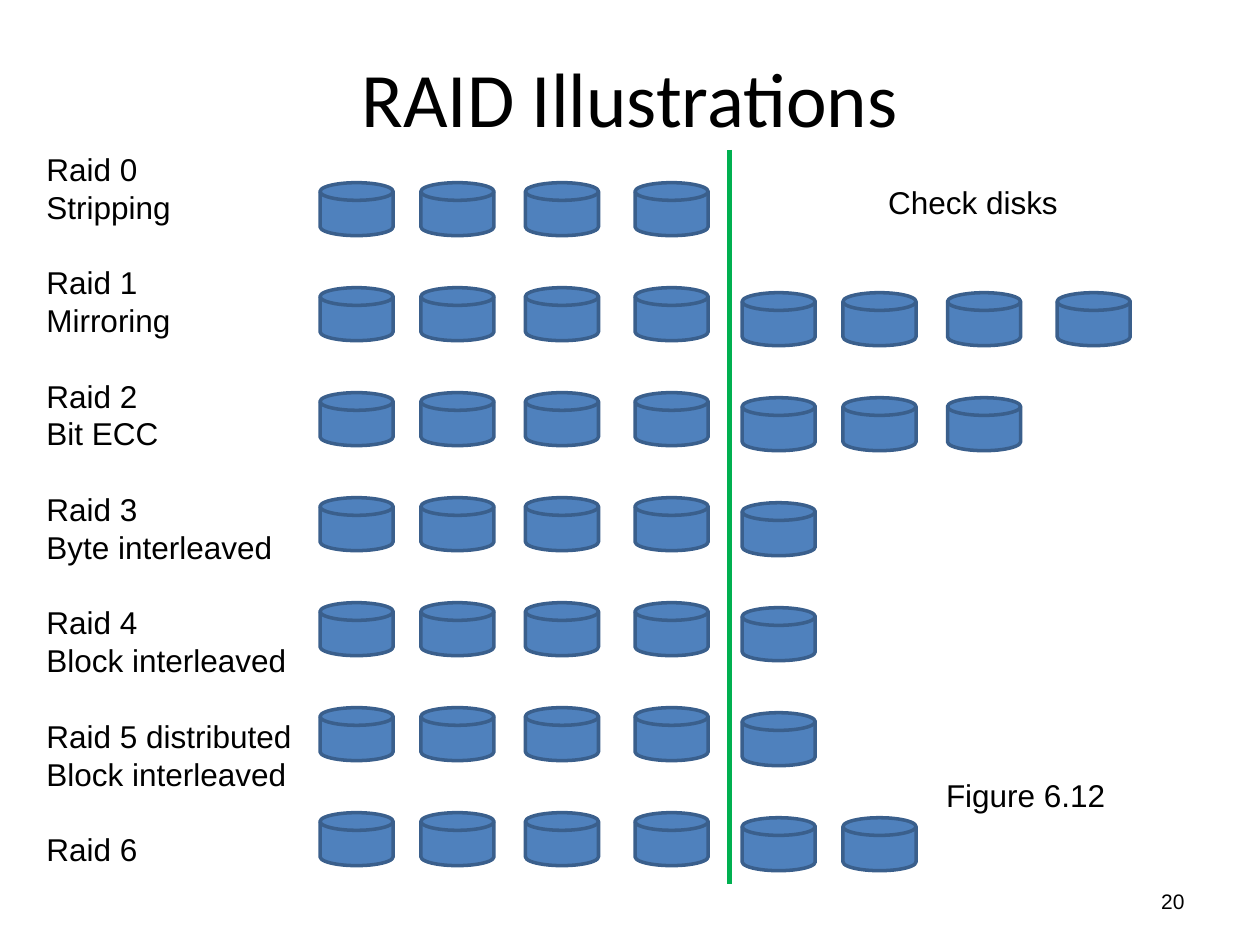
import pptx
import pptx.dml.color
import pptx.enum.shapes
import pptx.enum.text
import pptx.oxml.ns
import pptx.util
from lxml import etree

Inches = pptx.util.Inches
Pt = pptx.util.Pt
SHAPE = pptx.enum.shapes.MSO_SHAPE
ALIGN = pptx.enum.text.PP_ALIGN
ANCHOR = pptx.enum.text.MSO_ANCHOR
HUES = {"text": "000000", "disk": "4F81BD", "edge": "3A5F8C", "split": "00B050"}


def put(item, **vals):
    for name, val in vals.items():
        setattr(item, name, val)


def hue(name):
    return pptx.dml.color.RGBColor.from_string(HUES[name])


class Page:
    font = "Arial"
    size = 18

    def __init__(self, slide):
        self.slide = slide

    def text(self, box, groups, font=None, size=None, align=ALIGN.LEFT,
             anchor=ANCHOR.TOP, wrap=True, lead=None):
        """Write groups of lines; lead is the line pitch and the gap between groups."""
        frame = self.slide.shapes.add_textbox(*map(Inches, box)).text_frame
        put(frame, word_wrap=wrap, vertical_anchor=anchor)
        para = frame.paragraphs[0]
        for g, lines in enumerate(groups):
            for n, line in enumerate(lines):
                if g or n:
                    para = frame.add_paragraph()
                para.alignment = align
                if lead:
                    gap = lead if g and not n else 0
                    put(para, line_spacing=Pt(lead), space_before=Pt(gap))
                run = para.add_run()
                run.text = line
                put(run.font, name=font or self.font, size=Pt(size or self.size))
                run.font.color.rgb = hue("text")

    def disk(self, left, top):
        disk = self.slide.shapes.add_shape(
            SHAPE.FLOWCHART_MAGNETIC_DISK,
            *map(Inches, (left, top, 0.58, 0.42)))
        disk.shadow.inherit = False
        disk.fill.solid()
        disk.fill.fore_color.rgb = hue("disk")
        disk.line.color.rgb = hue("edge")
        disk.line.width = Pt(2)

    def line(self, x, top, end):
        line = self.slide.shapes.add_connector(
            pptx.enum.shapes.MSO_CONNECTOR.STRAIGHT,
            *map(Inches, (x, top, x, end)))
        line.line.color.rgb = hue("split")
        line.line.width = Pt(3)
        etree.SubElement(line._element.spPr, pptx.oxml.ns.qn("a:effectLst"))


LEVELS = [  # label lines, number of check disks
    (["Raid 0", "Stripping"], 0),
    (["Raid 1", "Mirroring"], 4),
    (["Raid 2", "Bit ECC"], 3),
    (["Raid 3", "Byte interleaved"], 1),
    (["Raid 4", "Block interleaved"], 1),
    (["Raid 5 distributed", "Block interleaved"], 1),
    (["Raid 6"], 2),
]
COLS = [2.54, 3.34, 4.17, 5.04]
TOP, PITCH = 1.45, 5 / 6
SHIFT, DROP = 3.35, 0.04  # check disks relative to data disks


def main():
    deck = pptx.Presentation()
    put(deck, slide_width=Inches(10), slide_height=Inches(7.5))
    page = Page(deck.slides.add_slide(deck.slide_layouts[6]))

    page.text((0.5, 0.3, 9, 0.94), [["RAID Illustrations"]], font="Calibri",
              size=44, align=ALIGN.CENTER, anchor=ANCHOR.MIDDLE)
    page.text((7.17, 6.95, 2.33, 0.4), [["20"]], size=12,
              align=ALIGN.RIGHT, anchor=ANCHOR.MIDDLE)
    for row, (_, checks) in enumerate(LEVELS):
        top = TOP + row * PITCH
        for left in COLS:
            page.disk(left, top)
        for left in COLS[:checks]:
            page.disk(left + SHIFT, top + DROP)
    page.text((0.27, 1.14, 2.27, 5.86), [label for label, _ in LEVELS], lead=21.6)
    page.line(5.79, 1.19, 7.02)
    page.text((6.95, 1.4, 1.56, 0.4), [["Check disks"]], wrap=False)
    page.text((7.41, 6.11, 1.48, 0.4), [["Figure 6.12"]], wrap=False)
    deck.save("out.pptx")


if __name__ == "__main__":
    main()
